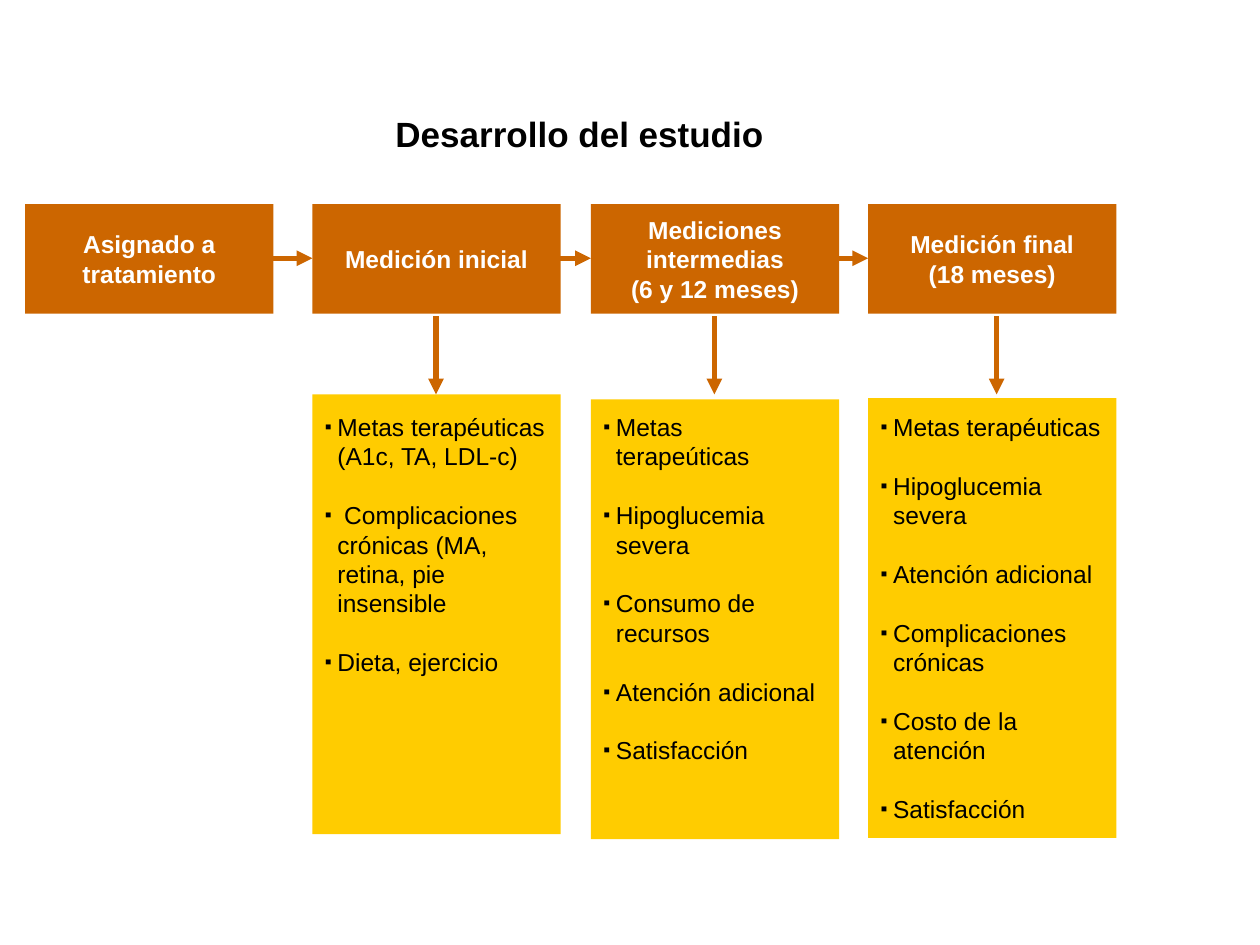
from lxml.etree import SubElement
from pptx import Presentation
from pptx.dml.color import RGBColor
from pptx.enum.shapes import MSO_CONNECTOR as Connector, MSO_SHAPE as Shape
from pptx.enum.text import MSO_ANCHOR as Anchor, PP_ALIGN as Align
from pptx.oxml.ns import qn
from pptx.util import Inches, Pt

COLORS = {"orange": "CC6600", "yellow": "FFCC00", "black": "000000", "white": "FFFFFF"}
FONT = "Arial"
BOX_WIDTH = 1.97
STAGE_TOP, STAGE_HEIGHT = 1.62, 0.87
DETAIL_HEIGHT = 3.49
ARROW_Y, ARROW_LENGTH = 2.05, 0.48
DROP_TOP, DROP_BOTTOM = 2.51, 3.13

# Stage: left edge and heading lines
STAGES = [
    (0.2, ["Asignado a tratamiento"]),
    (2.48, ["Medición inicial"]),
    (4.69, ["Mediciones intermedias", "(6 y 12 meses)"]),
    (6.89, ["Medición final", "(18 meses)"]),
]
# Detail: left edge, panel top, text width, arrow x, items
DETAILS = [
    (2.48, 3.13, 1.97, 3.46, [
        "Metas terapéuticas (A1c, TA, LDL-c)",
        " Complicaciones crónicas (MA, retina, pie insensible",
        "Dieta, ejercicio",
    ]),
    (4.69, 3.17, 1.94, 5.67, [
        "Metas terapeúticas", "Hipoglucemia severa", "Consumo de recursos",
        "Atención adicional", "Satisfacción",
    ]),
    (6.89, 3.16, 1.97, 7.91, [
        "Metas terapéuticas", "Hipoglucemia severa", "Atención adicional",
        "Complicaciones crónicas", "Costo de la atención", "Satisfacción",
    ]),
]


def color(name):
    return RGBColor.from_string(COLORS[name])


def add_span(para, text, size, color_name, bold=False):
    span = para.add_run()
    span.text = text
    span.font.name = FONT
    span.font.size = Pt(size)
    span.font.bold = bold
    span.font.color.rgb = color(color_name)


def next_para(frame, index):
    return frame.add_paragraph() if index else frame.paragraphs[0]


def add_box(page, left, top, height, fill):
    box = page.shapes.add_shape(
        Shape.RECTANGLE, Inches(left), Inches(top), Inches(BOX_WIDTH), Inches(height))
    box.shadow.inherit = False
    box.fill.solid()
    box.fill.fore_color.rgb = color(fill)
    box.line.fill.background()
    return box


def add_stage(page, left, lines):
    frame = add_box(page, left, STAGE_TOP, STAGE_HEIGHT, "orange").text_frame
    frame.word_wrap = True
    frame.vertical_anchor = Anchor.MIDDLE
    for index, line in enumerate(lines):
        para = next_para(frame, index)
        para.alignment = Align.CENTER
        add_span(para, line, 14, "white", bold=True)


def add_arrow(page, x1, y1, x2, y2):
    arrow = page.shapes.add_connector(
        Connector.STRAIGHT, Inches(x1), Inches(y1), Inches(x2), Inches(y2))
    arrow.line.color.rgb = color("orange")
    arrow.line.width = Pt(3)
    SubElement(arrow.line._get_or_add_ln(), qn("a:tailEnd"), type="triangle")
    SubElement(arrow._element.spPr, qn("a:effectLst"))


def set_bullet(para):
    props = para._p.get_or_add_pPr()
    props.set("marL", str(Inches(0.1)))
    props.set("indent", str(-Inches(0.1)))
    SubElement(props, qn("a:buSzPct"), val="80000")
    SubElement(props, qn("a:buFont"), typeface=FONT)
    SubElement(props, qn("a:buChar"), char="▪")


def add_bullets(page, left, width, items):
    box = page.shapes.add_textbox(Inches(left), Inches(3.22), Inches(width), Inches(3.4))
    frame = box.text_frame
    frame.word_wrap = True
    for index, item in enumerate(items):
        para = next_para(frame, index)
        set_bullet(para)
        if index:
            para.space_before = Pt(16.8)
        add_span(para, item, 14, "black")


def add_title(page, text):
    box = page.shapes.add_textbox(Inches(3.04), Inches(0.84), Inches(3.15), Inches(0.44))
    box.text_frame.word_wrap = False
    add_span(box.text_frame.paragraphs[0], text, 20, "black", bold=True)


def main():
    deck = Presentation()
    deck.slide_width, deck.slide_height = Inches(10), Inches(7.5)
    page = deck.slides.add_slide(deck.slide_layouts[6])

    add_title(page, "Desarrollo del estudio")

    # Row of stages, each later one reached by an arrow
    for left, lines in STAGES:
        add_stage(page, left, lines)
    for left, _ in STAGES[1:]:
        add_arrow(page, left - ARROW_LENGTH, ARROW_Y, left, ARROW_Y)

    # Measurements taken at each stage
    for left, top, width, arrow_x, items in DETAILS:
        add_box(page, left, top, DETAIL_HEIGHT, "yellow")
        add_bullets(page, left, width, items)
        add_arrow(page, arrow_x, DROP_TOP, arrow_x, DROP_BOTTOM)

    deck.save("out.pptx")


if __name__ == "__main__":
    main()
